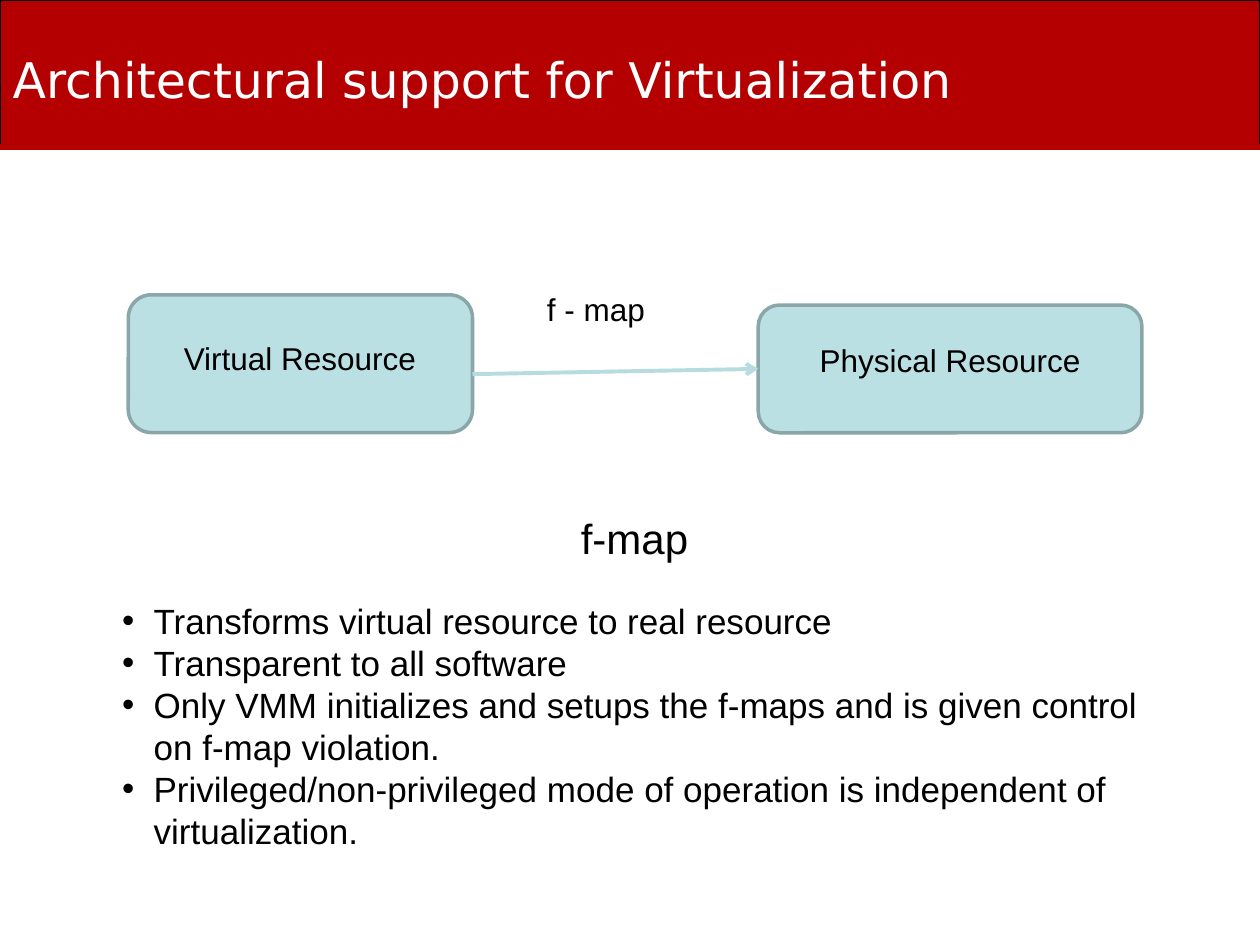
from lxml import etree
from pptx import Presentation
from pptx.dml.color import RGBColor
from pptx.enum import shapes, text
from pptx.oxml import ns
from pptx.util import Pt

RED = RGBColor(0xB4, 0x00, 0x00)
WHITE = RGBColor(0xFF, 0xFF, 0xFF)
BLACK = RGBColor(0x00, 0x00, 0x00)
PALE_TEAL = RGBColor(0xBB, 0xE0, 0xE3)
GREY_TEAL = RGBColor(0x8A, 0xA6, 0xA8)
ARROW_TEAL = RGBColor(0xB6, 0xDC, 0xDF)


def write(paragraph, words, size=18, font="Arial", color=BLACK,
          align=text.PP_ALIGN.CENTER, bullet=None):
    properties = paragraph._p.get_or_add_pPr()
    properties.set("marL", str(Pt(36) if bullet else 0))
    properties.set("indent", str(Pt(-18) if bullet else 0))
    if bullet:
        etree.SubElement(properties, ns.qn("a:buChar"), char=bullet)
    else:
        etree.SubElement(properties, ns.qn("a:buNone"))
    paragraph.text = words
    paragraph.alignment = align
    paragraph.space_before = Pt(0)
    paragraph.font.size = Pt(size)
    paragraph.font.name = font
    paragraph.font.color.rgb = color


def add_line(start, end, color, width):
    line = slide.shapes.add_connector(
        shapes.MSO_CONNECTOR.STRAIGHT, *map(Pt, start + end))
    line.line.color.rgb = color
    line.line.width = Pt(width)
    etree.SubElement(line._element.spPr, ns.qn("a:effectLst"))
    return line


presentation = Presentation()
presentation.slide_width, presentation.slide_height = Pt(720), Pt(540)
slide = presentation.slides.add_slide(presentation.slide_layouts[1])
title, body = slide.placeholders

# Red title band, behind the title
band = slide.shapes.add_shape(
    shapes.MSO_SHAPE.RECTANGLE, Pt(0), Pt(0), Pt(720), Pt(84))
band.shadow.inherit = False
band.fill.solid()
band.fill.fore_color.rgb = RED
band.line.color.rgb = BLACK
band.line.width = Pt(0.75)
band_edge = add_line((0, 84), (720, 84), RED, 3)
for shape in (band, band_edge):
    title._element.addprevious(shape._element)

# Title
title.left, title.top, title.width, title.height = Pt(0), Pt(0), Pt(576), Pt(90)
title.text_frame.vertical_anchor = text.MSO_ANCHOR.MIDDLE
title.text_frame.auto_size = text.MSO_AUTO_SIZE.NONE
write(title.text_frame.paragraphs[0], "Architectural support for Virtualization",
      size=28, font="DejaVu Sans", color=WHITE, align=text.PP_ALIGN.LEFT)

# Resource boxes, each grouped with its label, and the mapping label
resources = []
for words, box, label in (
    ("Virtual Resource", (73.3, 168.5, 196.7, 78.7), (78.5, 190.4, 185.8, 29)),
    ("f - map", None, (281.5, 162.3, 118, 29)),
    ("Physical Resource", (433.3, 174.3, 219.3, 73), (455.8, 191.5, 174.2, 29)),
):
    parent = slide.shapes
    if box:
        parent = slide.shapes.add_group_shape().shapes
        resource = parent.add_shape(
            shapes.MSO_SHAPE.ROUNDED_RECTANGLE, *map(Pt, box))
        resource.shadow.inherit = False
        resource.fill.solid()
        resource.fill.fore_color.rgb = PALE_TEAL
        resource.line.color.rgb = GREY_TEAL
        resource.line.width = Pt(2)
        resources.append(resource)
    caption = parent.add_textbox(*map(Pt, label))
    caption.text_frame.word_wrap = True
    write(caption.text_frame.paragraphs[0], words)

# Mapping arrow
arrow = add_line((270, 213.8), (433.3, 211), ARROW_TEAL, 2.25)
arrow.end_connect(resources[1], 1)
etree.SubElement(arrow.line._get_or_add_ln(), ns.qn("a:tailEnd"), type="arrow")

# Heading and bullet list
body.left, body.top, body.width, body.height = Pt(44.6), Pt(289), Pt(636), Pt(245)
body.text_frame.auto_size = text.MSO_AUTO_SIZE.NONE
write(body.text_frame.paragraphs[0], "f-map", size=24)
for words in (
    "Transforms virtual resource to real resource",
    "Transparent to all software",
    "Only VMM initializes and setups the f-maps and is given control "
    "on f-map violation.",
    "Privileged/non-privileged mode of operation is independent of "
    "virtualization.",
):
    paragraph = body.text_frame.add_paragraph()
    write(paragraph, words, size=20, align=text.PP_ALIGN.LEFT, bullet="•")
    paragraph.line_spacing = Pt(24)
body.text_frame.paragraphs[1].space_before = Pt(21)
slide.shapes._spTree.append(body._element)

presentation.save("out.pptx")
